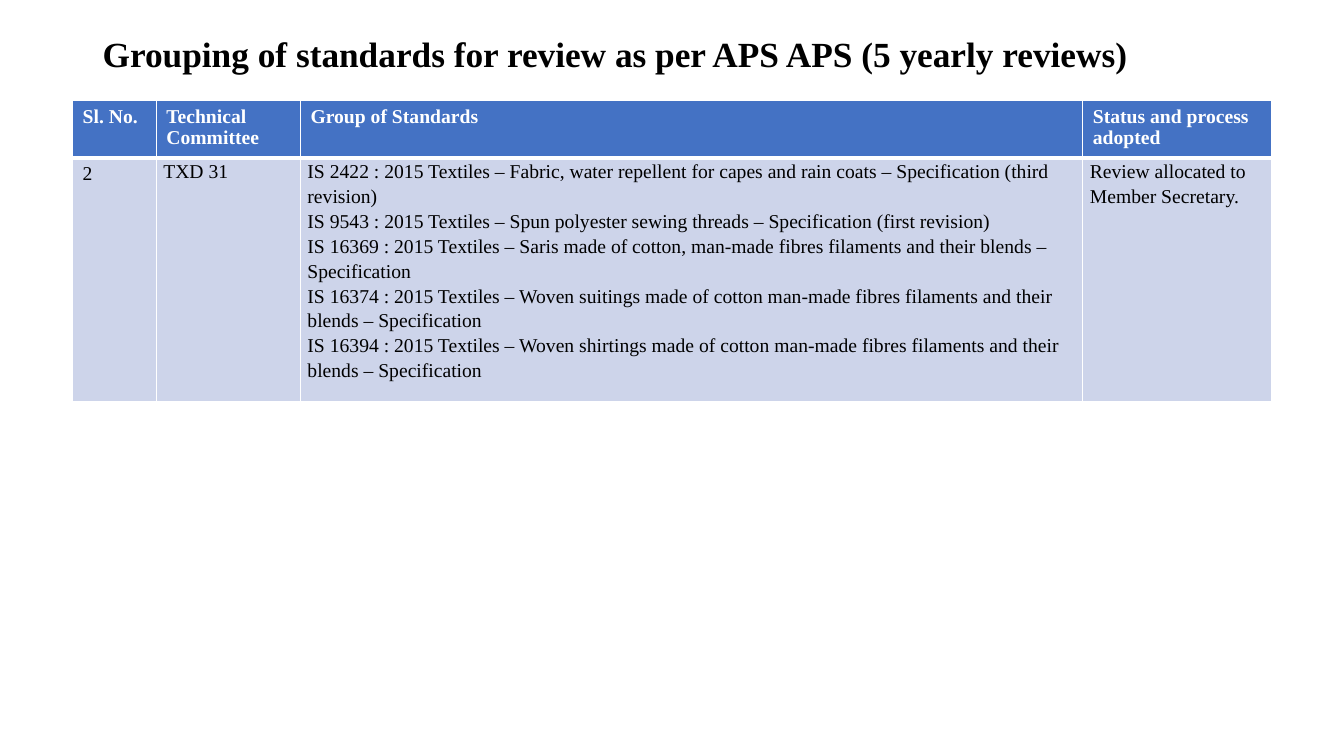
import pptx
import pptx.dml.color
import pptx.enum.text
import pptx.oxml
import pptx.oxml.ns
import pptx.util
from dataclasses import dataclass
from pptx.util import Inches


@dataclass(frozen=True)
class Theme:
    font: str = "Times New Roman"
    title_size: float = 25.2
    table_size: float = 14
    dark: str = "000000"
    light: str = "FFFFFF"
    header_fill: str = "4472C4"
    body_fill: str = "CDD4EA"
    thin: float = 1
    thick: float = 3


THEME = Theme()

COLUMN_WIDTHS = [0.83, 1.43, 7.76, 1.87]
ROW_HEIGHTS = [0.52, 2.02]
WIDE_INSETS = (0.1, 0.05)
TIGHT_INSETS = (0.07, 0)

HEADERS = ["Sl. No.", "Technical Committee", "Group of Standards",
           "Status and process adopted"]
STANDARDS = [
    "IS 2422 : 2015 Textiles – Fabric, water repellent for capes and rain coats"
    " – Specification (third revision)",
    "IS 9543 : 2015 Textiles – Spun polyester sewing threads"
    " – Specification (first revision)",
    "IS 16369 : 2015 Textiles – Saris made of cotton, man-made fibres filaments"
    " and their blends – Specification",
    "IS 16374 : 2015 Textiles – Woven suitings made of cotton man-made fibres"
    " filaments and their blends – Specification",
    "IS 16394 : 2015 Textiles – Woven shirtings made of cotton man-made fibres"
    " filaments and their blends – Specification",
]
REVIEW = [["2"], ["TXD 31"], STANDARDS, ["Review allocated to Member Secretary."]]


def rgb(color):
    return pptx.dml.color.RGBColor.from_string(color)


def write_text(tf, lines, size=THEME.table_size, color=THEME.dark, bold=False,
               spacing=1.0):
    """Write one paragraph per line in a single format."""
    tf.word_wrap = True
    for i, line in enumerate(lines):
        p = tf.paragraphs[0] if i == 0 else tf.add_paragraph()
        p.line_spacing = spacing
        r = p.add_run()
        r.text = line
        r.font.name = THEME.font
        r.font.size = pptx.util.Pt(size)
        r.font.bold = bold
        r.font.color.rgb = rgb(color)


def set_borders(cell, top, bottom):
    tc_pr = cell._tc.get_or_add_tcPr()
    widths = {"L": THEME.thin, "R": THEME.thin, "T": top, "B": bottom}
    for side, width in widths.items():
        tc_pr.append(pptx.oxml.parse_xml(
            f'<a:ln{side} {pptx.oxml.ns.nsdecls("a")} w="{pptx.util.Pt(width)}">'
            f'<a:solidFill><a:srgbClr val="{THEME.light}"/></a:solidFill>'
            f'</a:ln{side}>'))


def fill_cell(cell, lines, fill, insets=WIDE_INSETS, top=THEME.thin,
              bottom=THEME.thin, **text_format):
    set_borders(cell, top, bottom)
    cell.fill.solid()
    cell.fill.fore_color.rgb = rgb(fill)
    cell.margin_left = cell.margin_right = Inches(insets[0])
    cell.margin_top = cell.margin_bottom = Inches(insets[1])
    write_text(cell.text_frame, lines, **text_format)


def add_title(s, text):
    sp = s.shapes.add_textbox(Inches(0.92), Inches(0.11), Inches(11.5), Inches(0.89))
    tf = sp.text_frame
    tf.vertical_anchor = pptx.enum.text.MSO_ANCHOR.MIDDLE
    write_text(tf, [text], size=THEME.title_size, bold=True, spacing=0.9)


def add_review_table(s):
    table = s.shapes.add_table(
        len(ROW_HEIGHTS), len(COLUMN_WIDTHS), Inches(0.72), Inches(1),
        Inches(sum(COLUMN_WIDTHS)), Inches(sum(ROW_HEIGHTS))).table
    for column, width in zip(table.columns, COLUMN_WIDTHS):
        column.width = Inches(width)
    for row, height in zip(table.rows, ROW_HEIGHTS):
        row.height = Inches(height)

    # Header row
    for col, header in enumerate(HEADERS):
        fill_cell(table.cell(0, col), [header], THEME.header_fill,
                  bottom=THEME.thick, color=THEME.light, bold=True)

    # Review row: the serial number keeps the header's insets
    for col, lines in enumerate(REVIEW):
        fill_cell(table.cell(1, col), lines, THEME.body_fill,
                  insets=TIGHT_INSETS if col else WIDE_INSETS,
                  top=THEME.thick, spacing=1.15 if col else 1.0)


def main():
    prs = pptx.Presentation()
    prs.slide_width, prs.slide_height = Inches(13.33), Inches(7.5)
    s = prs.slides.add_slide(prs.slide_layouts[6])
    add_title(s, "Grouping of standards for review as per APS APS (5 yearly reviews)")
    add_review_table(s)
    prs.save("out.pptx")


if __name__ == "__main__":
    main()
